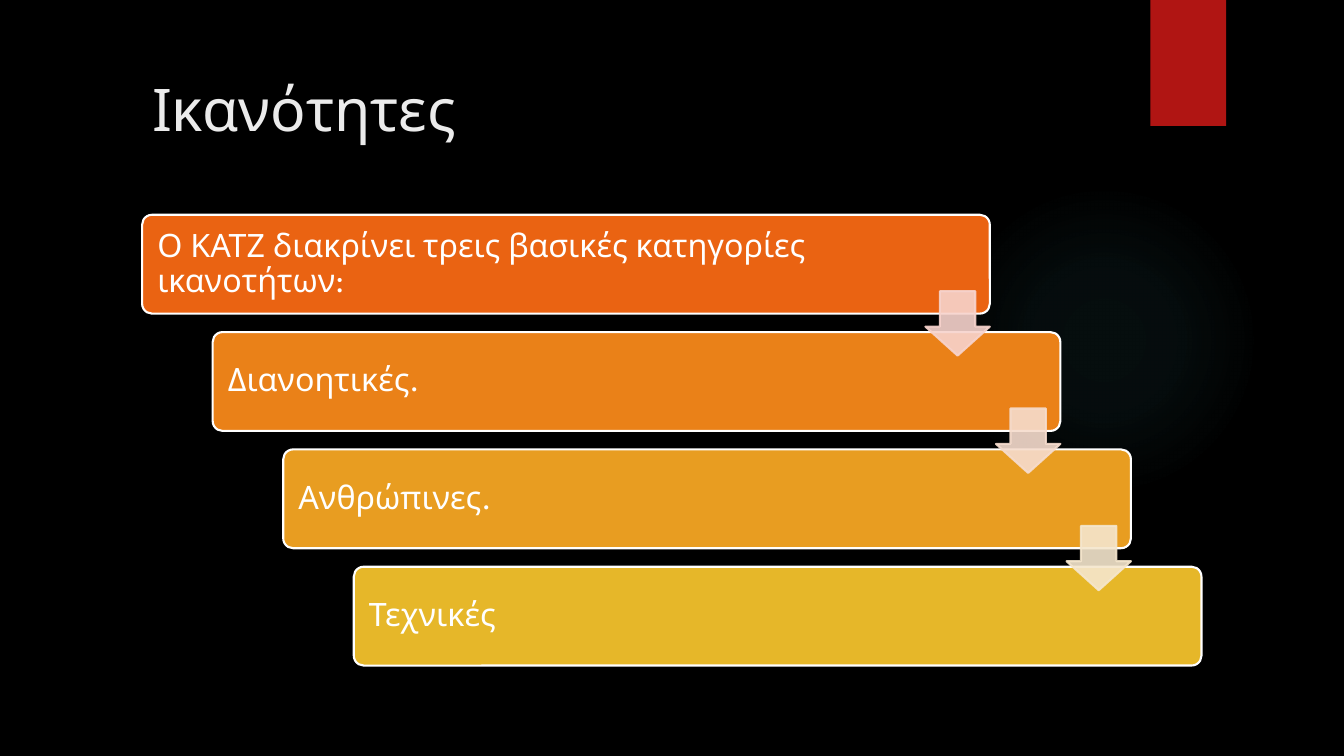
from lxml import etree
from pptx import Presentation
from pptx.dml.color import RGBColor
from pptx.enum.shapes import MSO_SHAPE
from pptx.enum.text import MSO_ANCHOR, PP_ALIGN
from pptx.oxml import parse_xml
from pptx.oxml.ns import nsdecls, qn
from pptx.util import Pt

# Content
TITLE = "Ικανότητες"
STEPS = [
    ("Ο ΚΑΤΖ διακρίνει τρεις βασικές κατηγορίες ικανοτήτων:", RGBColor(0xEA, 0x63, 0x12)),
    ("Διανοητικές.", RGBColor(0xEA, 0x81, 0x18)),
    ("Ανθρώπινες.", RGBColor(0xE8, 0x9D, 0x21)),
    ("Τεχνικές", RGBColor(0xE6, 0xB7, 0x29)),
]
ARROW_COLORS = [
    RGBColor(0xF7, 0xD3, 0xCC),
    RGBColor(0xF6, 0xDC, 0xCD),
    RGBColor(0xF5, 0xE6, 0xCD),
]
GLOW_STOPS = [(0, 7), (36, 6), (69, 0)]  # position %, opacity %

# Style
FONT = "League Spartan"
BLACK = RGBColor(0, 0, 0)
WHITE = RGBColor(0xFF, 0xFF, 0xFF)
TITLE_GREY = RGBColor(0xEB, 0xEB, 0xEB)
RED = RGBColor(0xB0, 0x15, 0x13)
TEAL = RGBColor(0x50, 0xB9, 0xC1)
OVAL, RECT = MSO_SHAPE.OVAL, MSO_SHAPE.RECTANGLE
ROUND, DOWN = MSO_SHAPE.ROUNDED_RECTANGLE, MSO_SHAPE.DOWN_ARROW
TOP, MIDDLE, LEFT = MSO_ANCHOR.TOP, MSO_ANCHOR.MIDDLE, PP_ALIGN.LEFT

# Staircase layout, in points
BOX_X, BOX_Y, BOX_W, BOX_H = 101.5, 153.4, 605.5, 70.6
STEP_X, STEP_Y = 50.4, 83.8
ARROW_SIZE = 46
ARROW_X, ARROW_Y = BOX_X + BOX_W - ARROW_SIZE, 208

prs = Presentation()
prs.slide_width, prs.slide_height = Pt(960), Pt(540)
s = prs.slides.add_slide(prs.slide_layouts[6])
s.background.fill.solid()
s.background.fill.fore_color.rgb = BLACK


def add_shape(kind, x, y, w, h, color, line=None):
    sp = s.shapes.add_shape(kind, Pt(x), Pt(y), Pt(w), Pt(h))
    sp.shadow.inherit = False
    sp.fill.solid()
    sp.fill.fore_color.rgb = color
    if line is None:
        sp.line.fill.background()
    else:
        sp.line.color.rgb = line
        sp.line.width = Pt(1.5)
    return sp


def write(sp, text, size, color, anchor, insets):
    tf = sp.text_frame
    tf.word_wrap = True
    tf.vertical_anchor = anchor
    tf.margin_left, tf.margin_top, tf.margin_right, tf.margin_bottom = map(Pt, insets)
    p = tf.paragraphs[0]
    p.alignment = LEFT
    r = p.add_run()
    r.text = text
    r.font.size, r.font.name = Pt(size), FONT
    r.font.color.rgb = color
    return p


# Soft glow behind the steps
glow = add_shape(OVAL, 677.5, 131.8, 221.8, 221.8, TEAL)
stops = "".join(
    f'<a:gs pos="{pos * 1000}"><a:srgbClr val="{TEAL}">'
    f'<a:alpha val="{alpha * 1000}"/></a:srgbClr></a:gs>'
    for pos, alpha in GLOW_STOPS
)
gradient = parse_xml(
    f'<a:gradFill {nsdecls("a")}><a:gsLst>{stops}</a:gsLst><a:path path="circle">'
    '<a:fillToRect l="50000" t="50000" r="50000" b="50000"/></a:path></a:gradFill>'
)
spPr = glow._element.spPr
spPr.replace(spPr.find(qn("a:solidFill")), gradient)

# Red tab and title
add_shape(RECT, 821.8, 0, 54, 90, RED)
title = s.shapes.add_textbox(Pt(101.5), Pt(48.2), Pt(802.8), Pt(86.4))
write(title, TITLE, 42, TITLE_GREY, TOP, (7.2, 3.6, 7.2, 3.6))

# Step boxes
for i, (text, color) in enumerate(STEPS):
    box = add_shape(ROUND, BOX_X + i * STEP_X, BOX_Y + i * STEP_Y, BOX_W, BOX_H, color, WHITE)
    box.adjustments[0] = 0.1
    p = write(box, text, 23, WHITE, MIDDLE, (8.8, 8.8, 87, 8.8))
    p.line_spacing = 0.9

# Arrows between the steps
for i, color in enumerate(ARROW_COLORS):
    arrow = add_shape(DOWN, ARROW_X + i * STEP_X, ARROW_Y + i * STEP_Y,
                      ARROW_SIZE, ARROW_SIZE, color, color)
    arrow.adjustments[0], arrow.adjustments[1] = 0.55, 0.45
    for clr in arrow._element.spPr.iter(qn("a:srgbClr")):
        etree.SubElement(clr, qn("a:alpha")).set("val", "90000")

prs.save("out.pptx")
